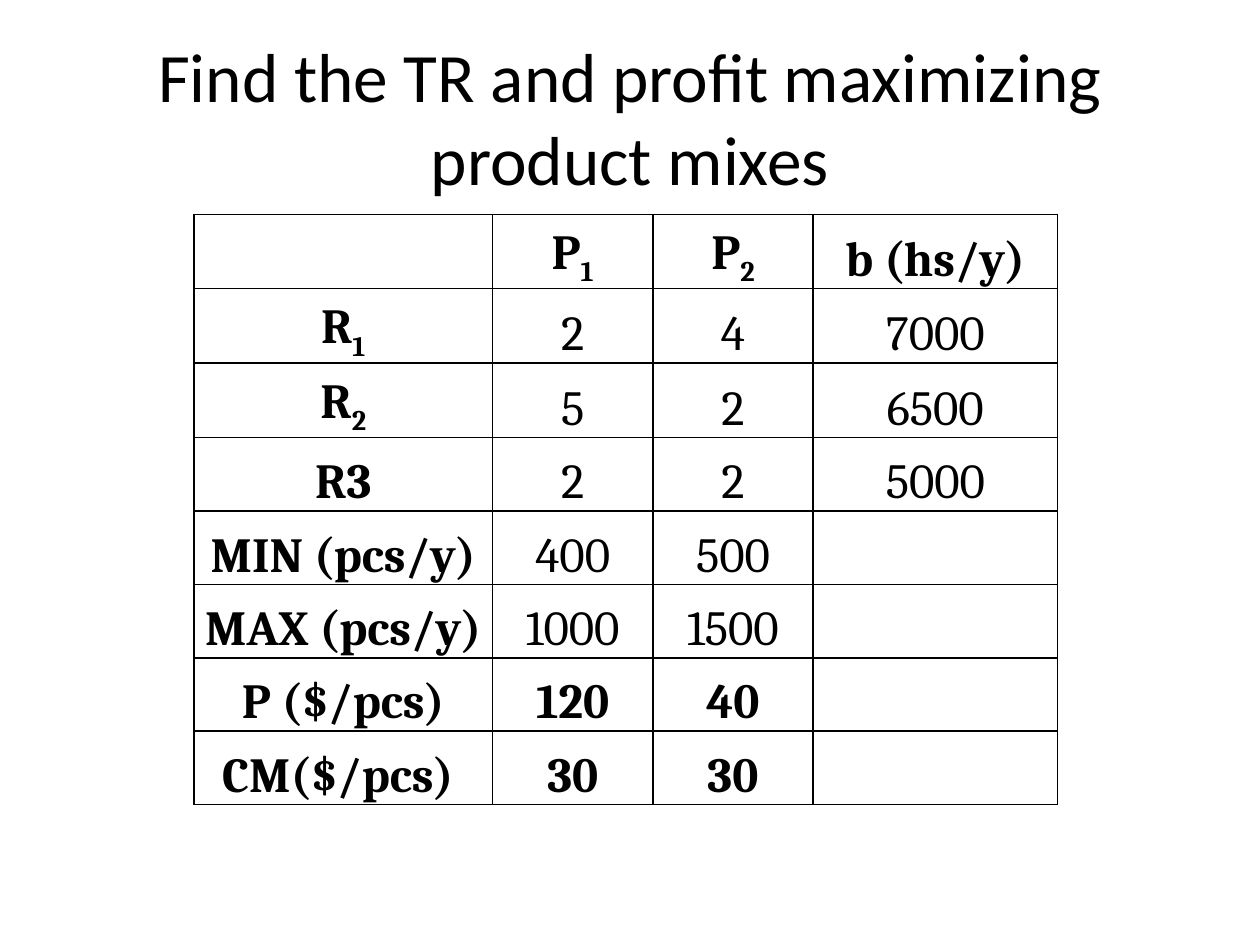
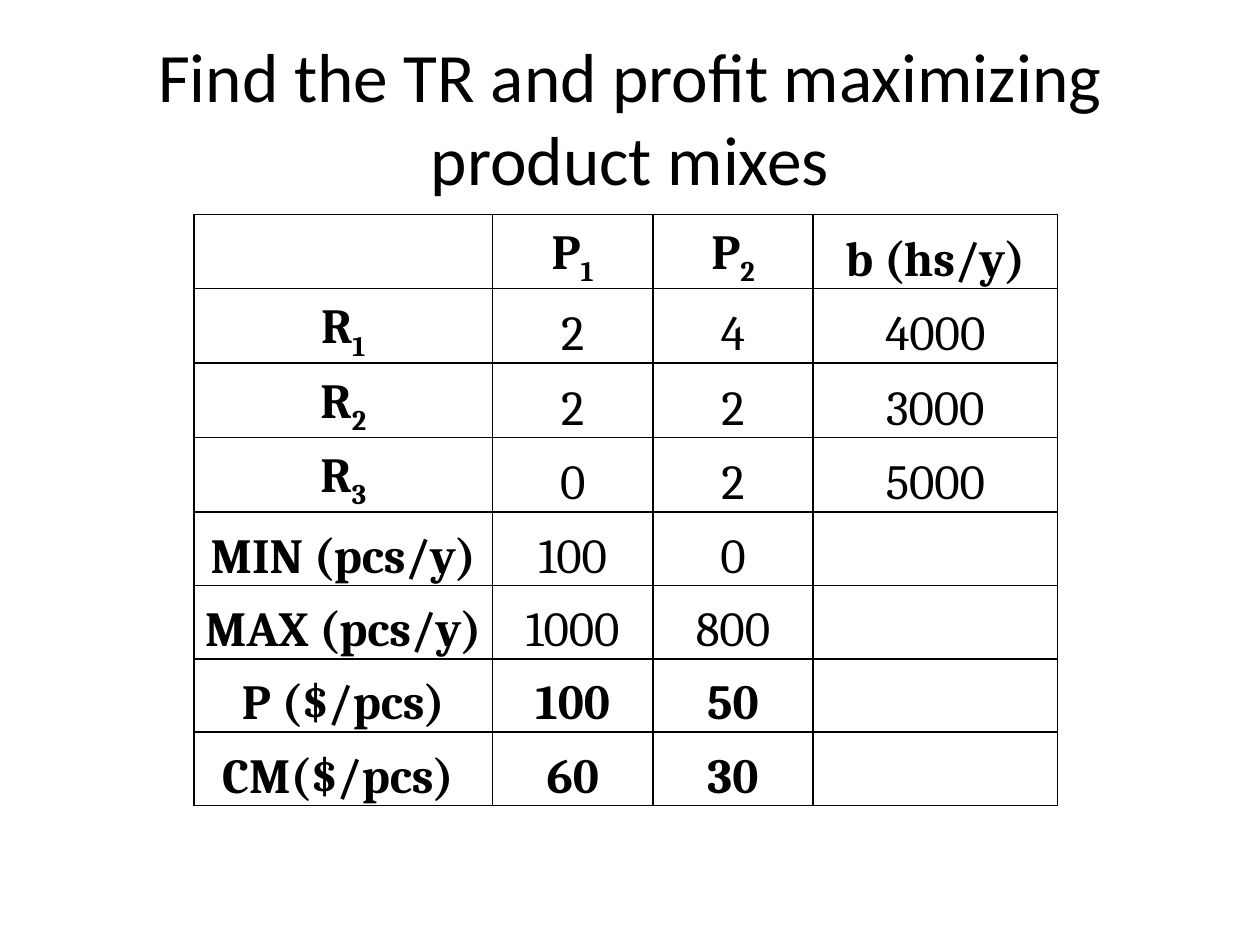
from lxml.etree import SubElement
from pptx import Presentation
from pptx.dml.color import RGBColor
from pptx.enum.text import MSO_ANCHOR as Anchor, MSO_AUTO_SIZE as AutoSize, PP_ALIGN as Align
from pptx.oxml import parse_xml
from pptx.oxml.ns import nsdecls, qn
from pptx.util import Cm, Pt

TITLE = "Find the TR and profit maximizing product mixes"
HEADER = ("", "P_1", "P_2", "b (hs/y)")
MIXES = [
    [
        ("R_1", "2", "4", "7000"),
        ("R_2", "5", "2", "6500"),
        ("R3", "2", "2", "5000"),
        ("MIN (pcs/y)", "400", "500", ""),
        ("MAX (pcs/y)", "1000", "1500", ""),
        ("P ($/pcs)", "120", "40", ""),
        ("CM($/pcs) ", "30", "30", ""),
    ],
    [
        ("R_1", "2", "4", "4000"),
        ("R_2", "2", "2", "3000"),
        ("R_3", "0", "2", "5000"),
        ("MIN (pcs/y)", "100", "0", ""),
        ("MAX (pcs/y)", "1000", "800", ""),
        ("P ($/pcs)", "100", "50", ""),
        ("CM($/pcs) ", "60", "30", ""),
    ],
]
COLORS = {"ink": "000000"}
TITLE_BOX = (Cm(1.27), Cm(0.76), Cm(22.86), Cm(3.18))
TABLE_LEFT, TABLE_TOP = Cm(3.91), Cm(4.32)
COL_WIDTHS = (Cm(6.02), Cm(3.23), Cm(3.23), Cm(4.93))
ROW_HEIGHT = Cm(1.48)
MARGIN = Cm(0.03)
FIRST_MONEY_ROW = 6


def style(p, font, size, bold=False):
    p.alignment = Align.CENTER
    p.font.name = font
    p.font.size = Pt(size)
    p.font.bold = bold
    p.font.color.rgb = RGBColor.from_string(COLORS["ink"])


def add_title(s):
    title = s.shapes.title
    title.left, title.top, title.width, title.height = TITLE_BOX
    tf = title.text_frame
    tf.text = TITLE
    tf.auto_size = AutoSize.NONE
    tf.vertical_anchor = Anchor.MIDDLE
    style(tf.paragraphs[0], "Calibri", 39.6)


def set_borders(cell):
    tcPr = cell._tc.get_or_add_tcPr()
    for i, side in enumerate(("lnL", "lnR", "lnT", "lnB")):
        ln = parse_xml(f'<a:{side} {nsdecls("a")} w="{Pt(1)}"/>')
        fill = SubElement(ln, qn("a:solidFill"))
        SubElement(fill, qn("a:srgbClr"), val=COLORS["ink"])
        tcPr.insert(i, ln)


def fill_cell(cell, text, bold):
    cell.fill.background()
    set_borders(cell)
    if not text:
        return
    cell.vertical_anchor = Anchor.BOTTOM
    cell.margin_left = cell.margin_right = cell.margin_top = MARGIN
    cell.margin_bottom = 0
    p = cell.text_frame.paragraphs[0]
    style(p, "Cambria", 28, bold)
    p.line_spacing = 1.15
    p.space_after = Pt(10)
    base, _, subscript = text.partition("_")
    p.add_run().text = base
    if subscript:
        r = p.add_run()
        r.text = subscript
        r._r.get_or_add_rPr().set("baseline", "-25000")


def add_mix_table(s, rows):
    table = s.shapes.add_table(len(rows), len(HEADER), TABLE_LEFT, TABLE_TOP,
                               sum(COL_WIDTHS), ROW_HEIGHT * len(rows)).table
    table.first_row = table.horz_banding = False
    for column, width in zip(table.columns, COL_WIDTHS):
        column.width = width
    for i, row in enumerate(rows):
        table.rows[i].height = ROW_HEIGHT
        for j, text in enumerate(row):
            bold = i == 0 or j == 0 or i >= FIRST_MONEY_ROW
            fill_cell(table.cell(i, j), text, bold)


def main():
    prs = Presentation()
    prs.slide_width, prs.slide_height = Cm(25.4), Cm(19.05)
    for mix in MIXES:
        s = prs.slides.add_slide(prs.slide_layouts[5])
        add_title(s)
        add_mix_table(s, [HEADER, *mix])
    prs.save("out.pptx")


if __name__ == "__main__":
    main()
